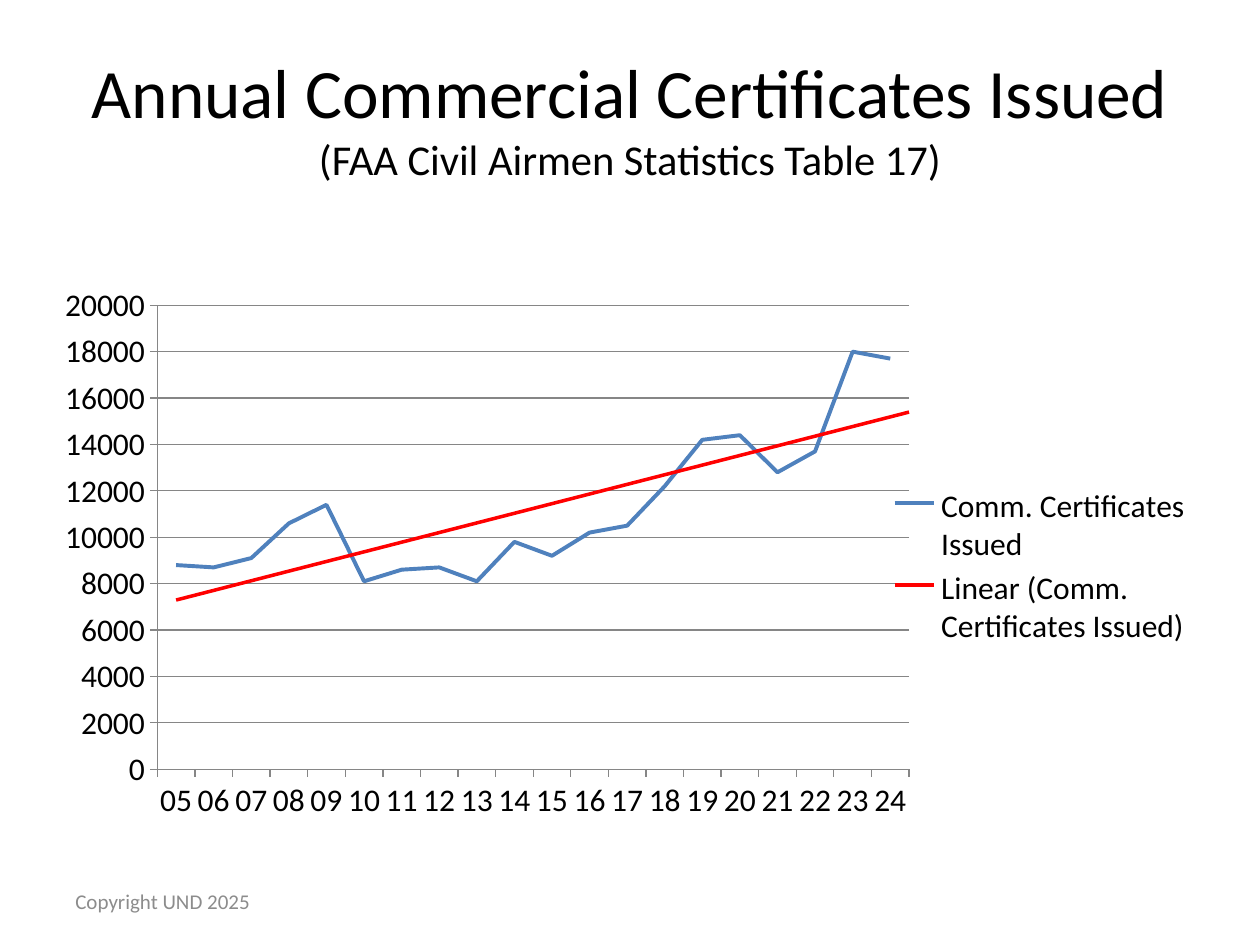
from lxml import etree
from pptx import Presentation
from pptx import util as u
from pptx.chart import data as cd
from pptx.dml.color import RGBColor
from pptx.enum import chart as ce, text
from pptx.oxml import parse_xml
from pptx.oxml.ns import nsdecls, qn

BLACK = RGBColor(0x00, 0x00, 0x00)
GRAY = RGBColor(0x8C, 0x8C, 0x8C)
AXIS_GRAY = RGBColor(0x86, 0x86, 0x86)
BLUE = RGBColor(0x4F, 0x81, 0xBD)
RED = RGBColor(0xFF, 0x00, 0x00)

FIRST_YEAR = 5
CERTIFICATES = (8800, 8700, 9100, 10600, 11400, 8100, 8600, 8700, 8100, 9800,
                9200, 10200, 10500, 12200, 14200, 14400, 12800, 13700, 18000, 17700)


class SlideBuilder:
    """Holds the style and the current slide, and adds its elements."""

    font_name = "Calibri"

    def __init__(self, slide):
        self.slide = slide

    def style(self, font, size, color):
        for name, value in {"name": self.font_name, "size": u.Pt(size)}.items():
            setattr(font, name, value)
        font.color.rgb = color

    def text(self, box, lines, color, align):
        frame = self.slide.shapes.add_textbox(*map(u.Inches, box)).text_frame
        frame.word_wrap = True
        frame.vertical_anchor = text.MSO_ANCHOR.MIDDLE
        paragraph = frame.paragraphs[0]
        paragraph.alignment = align
        for index, (words, size) in enumerate(lines):
            if index:
                paragraph.add_line_break()
            run = paragraph.add_run()
            run.text = words
            self.style(run.font, size, color)

    def place(self, part, position, box, inner=False):
        for old in part.findall(qn("c:layout")):
            part.remove(old)
        layout = parse_xml(f"<c:layout {nsdecls('c')}><c:manualLayout/></c:layout>")
        settings = {"layoutTarget": "inner"} if inner else {}
        settings.update(xMode="edge", yMode="edge", **dict(zip("xywh", box)))
        for name, value in settings.items():
            etree.SubElement(layout[0], qn(f"c:{name}")).set("val", str(value))
        part.insert(position, layout)

    def trend(self, series, color, width):
        trendline = parse_xml(
            f'<c:trendline {nsdecls("c", "a")}><c:spPr><a:ln w="{u.Pt(width)}">'
            f'<a:solidFill><a:srgbClr val="{color}"/></a:solidFill></a:ln></c:spPr>'
            '<c:trendlineType val="linear"/><c:forward val="0.5"/>'
            '<c:dispRSqr val="0"/><c:dispEq val="0"/></c:trendline>')
        series._element.find(qn("c:cat")).addprevious(trendline)

    def line_chart(self, box, name, categories, values, plot_box, legend_box):
        data = cd.CategoryChartData()
        data.categories = categories
        data.add_series(name, values)
        chart = self.slide.shapes.add_chart(
            ce.XL_CHART_TYPE.LINE, *map(u.Inches, box), data).chart
        chart.has_title = False
        self.style(chart.font, 18, BLACK)
        chart.plots[0].vary_by_categories = False

        series = chart.plots[0].series[0]
        series.smooth = False
        series.marker.style = ce.XL_MARKER_STYLE.NONE
        series.format.line.color.rgb = BLUE
        series.format.line.width = u.Pt(2.25)
        self.trend(series, RED, 2)

        scale = {"minimum_scale": 0, "maximum_scale": 20000, "major_unit": 2000,
                 "has_major_gridlines": True}
        for key, value in scale.items():
            setattr(chart.value_axis, key, value)
        for axis in (chart.category_axis, chart.value_axis):
            axis.major_tick_mark = ce.XL_TICK_MARK.OUTSIDE
            axis.format.line.color.rgb = AXIS_GRAY
        chart.value_axis.major_gridlines.format.line.color.rgb = AXIS_GRAY

        chart.has_legend = True
        chart.legend.position = ce.XL_LEGEND_POSITION.RIGHT
        chart.legend.include_in_layout = False
        self.style(chart.legend.font, 18, BLACK)
        self.place(chart.legend._element, 1, legend_box)
        self.place(chart._chartSpace.chart.plotArea, 0, plot_box, inner=True)


def main():
    deck = Presentation()
    deck.slide_width, deck.slide_height = u.Inches(10), u.Inches(7.5)
    builder = SlideBuilder(deck.slides.add_slide(deck.slide_layouts[6]))
    builder.text((0.5, 0.3, 9, 1.25),
                 [("Annual Commercial Certificates Issued", 39.6),
                  ("(FAA Civil Airmen Statistics Table 17)", 24.3)],
                 BLACK, text.PP_ALIGN.CENTER)
    builder.text((0.5, 6.95, 2.33, 0.4), [("Copyright UND 2025", 12)],
                 GRAY, text.PP_ALIGN.LEFT)
    years = [f"{FIRST_YEAR + i:02d}" for i in range(len(CERTIFICATES))]
    builder.line_chart((0.25, 1.75, 9.25, 4.95), "Comm. Certificates Issued",
                       years, CERTIFICATES,
                       plot_box=(0.108, 0.136, 0.645, 0.744),
                       legend_box=(0.73, 0.42, 0.27, 0.27))
    deck.save("out.pptx")


if __name__ == "__main__":
    main()
